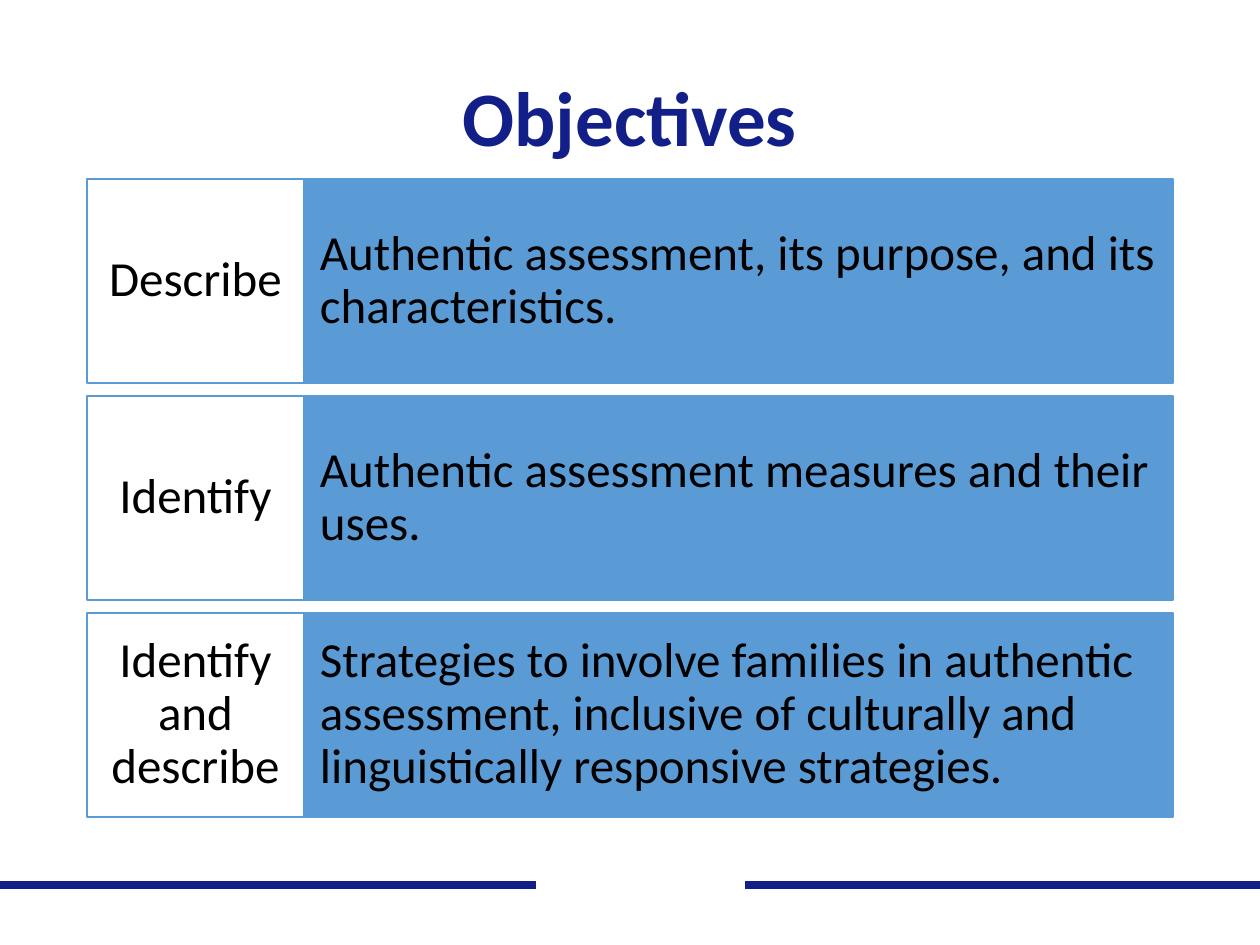
from dataclasses import dataclass

from lxml import etree
from pptx import Presentation
from pptx import util as u
from pptx.dml.color import RGBColor
from pptx.enum import shapes, text
from pptx.oxml.ns import qn

EMU_PER_PX = 914400 / 126
NAVY, BLUE, WHITE, BLACK = "121F88", "5B9BD5", "FFFFFF", "000000"
FONT = "Calibri"

LEFT, SPLIT, RIGHT = 87, 304, 1173
FIRST_TOP, ROW_HEIGHT, ROW_PITCH = 179, 204, 217
RULE_Y = 885


@dataclass
class Objective:
    verb: str
    detail: str


@dataclass
class Rule:
    start: int
    end: int
    color: str


@dataclass
class TextStyle:
    size: int
    color: str
    align: text.PP_ALIGN
    bold: bool = False
    inset_x: int = 13
    inset_y: int = 6


TITLE = TextStyle(44, NAVY, text.PP_ALIGN.CENTER, bold=True)
VERB = TextStyle(28, BLACK, text.PP_ALIGN.CENTER, inset_x=11, inset_y=20)
DETAIL = TextStyle(28, BLACK, text.PP_ALIGN.LEFT, inset_x=16, inset_y=52)

OBJECTIVES = [
    Objective("Describe", "Authentic assessment, its purpose, and its characteristics."),
    Objective("Identify", "Authentic assessment measures and their uses."),
    Objective(
        "Identify and describe",
        "Strategies to involve families in authentic assessment, inclusive of "
        "culturally and linguistically responsive strategies.",
    ),
]
RULES = [Rule(0, 1260, NAVY), Rule(536, 745, WHITE)]


def px(length: int) -> u.Emu:
    return u.Emu(round(length * EMU_PER_PX))


def rgb(color: str) -> RGBColor:
    return RGBColor.from_string(color)


def write(box, words: str, style: TextStyle) -> None:
    frame = box.text_frame
    frame.word_wrap = True
    frame.vertical_anchor = text.MSO_ANCHOR.MIDDLE
    frame.margin_left = frame.margin_right = px(style.inset_x)
    frame.margin_top = frame.margin_bottom = px(style.inset_y)
    para = frame.paragraphs[0]
    para.alignment = style.align
    para.line_spacing = 0.9
    span = para.add_run()
    span.text = words
    span.font.name = FONT
    span.font.size = u.Pt(style.size)
    span.font.bold = style.bold
    span.font.color.rgb = rgb(style.color)


def draw_rule(page, rule: Rule) -> None:
    line = page.shapes.add_connector(
        shapes.MSO_CONNECTOR.STRAIGHT,
        px(rule.start), px(RULE_Y), px(rule.end), px(RULE_Y),
    )
    line.line.color.rgb = rgb(rule.color)
    line.line.width = u.Pt(4.5)
    etree.SubElement(line._element.spPr, qn("a:effectLst"))


def draw_cell(page, left: int, right: int, top: int, fill: str,
              words: str, style: TextStyle) -> None:
    box = page.shapes.add_shape(
        shapes.MSO_SHAPE.RECTANGLE,
        px(left), px(top), px(right - left), px(ROW_HEIGHT),
    )
    box.shadow.inherit = False
    box.fill.solid()
    box.fill.fore_color.rgb = rgb(fill)
    box.line.color.rgb = rgb(BLUE)
    box.line.width = u.Pt(1)
    write(box, words, style)


def draw_objective(page, row: int, objective: Objective) -> None:
    top = FIRST_TOP + row * ROW_PITCH
    draw_cell(page, SPLIT, RIGHT, top, BLUE, objective.detail, DETAIL)
    draw_cell(page, LEFT, SPLIT, top, WHITE, objective.verb, VERB)


def main() -> None:
    deck = Presentation()
    deck.slide_width, deck.slide_height = px(1260), px(945)
    page = deck.slides.add_slide(deck.slide_layouts[6])
    for rule in RULES:
        draw_rule(page, rule)
    title = page.shapes.add_textbox(px(LEFT), px(30), px(RIGHT - LEFT), px(183))
    write(title, "Objectives", TITLE)
    for row, objective in enumerate(OBJECTIVES):
        draw_objective(page, row, objective)
    deck.save("out.pptx")


if __name__ == "__main__":
    main()
